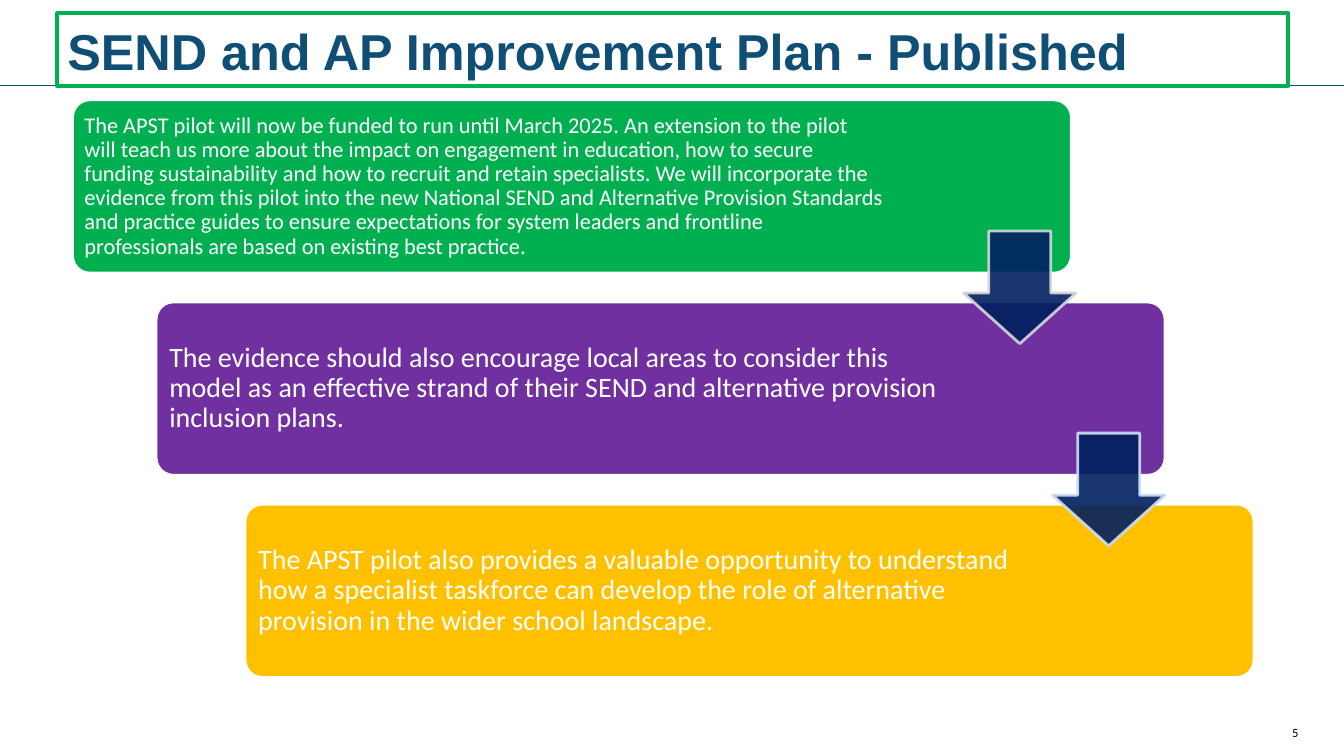
from dataclasses import dataclass
from lxml.etree import SubElement
from pptx import Presentation
from pptx.dml.color import RGBColor
from pptx.enum.shapes import MSO_CONNECTOR, MSO_SHAPE
from pptx.enum.text import MSO_ANCHOR, PP_ALIGN
from pptx.oxml.ns import qn
from pptx.util import Pt


@dataclass(frozen=True)
class Theme:
    teal: str = "104F75"
    green: str = "00B050"
    purple: str = "7030A0"
    gold: str = "FFC000"
    navy: str = "002060"
    grey: str = "D8D8D8"
    sky: str = "CEE0F4"
    white: str = "FFFFFF"
    black: str = "000000"
    head: str = "Arial"
    body: str = "Calibri"
    title: int = 36
    large: int = 20
    small: int = 16
    note: int = 9


THEME = Theme()
WIDE, HIGH = 960, 540
STEP = 144.4
CARD = 123.8

# Left, width, fill, type size, text width, inset, words
CARDS = [
    (51.8, 713.5, THEME.green, THEME.small, 581, 5,
     "The APST pilot will now be funded to run until March 2025. An extension "
     "to the pilot will teach us more about the impact on engagement in "
     "education, how to secure funding sustainability and how to recruit and "
     "retain specialists. We will incorporate the evidence from this pilot "
     "into the new National SEND and Alternative Provision Standards and "
     "practice guides to ensure expectations for system leaders and frontline "
     "professionals are based on existing best practice."),
    (111.5, 720.7, THEME.purple, THEME.large, 569.5, 5.8,
     "The evidence should also encourage local areas to consider this model "
     "as an effective strand of their SEND and alternative provision "
     "inclusion plans."),
    (175, 720.7, THEME.gold, THEME.large, 569.5, 5.8,
     "The APST pilot also provides a valuable opportunity to understand how a "
     "specialist taskforce can develop the role of alternative provision in "
     "the wider school landscape."),
]


def place(box):
    return [Pt(n) for n in box]


def rgb(code):
    return RGBColor.from_string(code)


def fade(color, share):
    """Make a solid fill or line partly see-through."""
    for tone in color.iter(qn("a:srgbClr")):
        SubElement(tone, qn("a:alpha"), val=str(share * 1000))


def draw(slide, kind, box, fill, edge, width):
    shape = slide.shapes.add_shape(kind, *place(box))
    shape.shadow.inherit = False
    if fill:
        shape.fill.solid()
        shape.fill.fore_color.rgb = rgb(fill)
    else:
        shape.fill.background()
    shape.line.color.rgb = rgb(edge)
    shape.line.width = Pt(width)
    return shape


def write(shape, words, face, size, color, inset, anchor=MSO_ANCHOR.MIDDLE,
          align=PP_ALIGN.LEFT, bold=False, lead=1.0):
    frame = shape.text_frame
    frame.text = words
    frame.word_wrap = True
    frame.vertical_anchor = anchor
    frame.margin_left = frame.margin_right = Pt(inset[0])
    frame.margin_top = frame.margin_bottom = Pt(inset[1])
    para = frame.paragraphs[0]
    para.alignment = align
    para.line_spacing = lead
    font = para.runs[0].font
    font.name, font.size, font.bold = face, Pt(size), bold
    font.color.rgb = rgb(color)


def add_rule(slide, left, top, width):
    rule = slide.shapes.add_connector(
        MSO_CONNECTOR.STRAIGHT, *place((left, top, left + width, top)))
    rule.line.color.rgb = rgb(THEME.teal)
    rule.line.width = Pt(1)
    SubElement(rule._element.spPr, qn("a:effectLst"))


def add_title(slide, box):
    shape = draw(slide, MSO_SHAPE.RECTANGLE, box, None, THEME.green, 3)
    write(shape, "SEND and AP Improvement Plan - Published", THEME.head,
          THEME.title, THEME.teal, (7.2, 3.6), MSO_ANCHOR.BOTTOM, bold=True)


def add_card(slide, box, fill, size, span, inset, words):
    left, top, width, height = box
    card = draw(slide, MSO_SHAPE.ROUNDED_RECTANGLE, box, fill, THEME.white, 2)
    card.adjustments[0] = 0.1
    pad = 3.6
    text = slide.shapes.add_textbox(
        *place((left + pad, top + pad, span, height - 2 * pad)))
    write(text, words, THEME.body, size, THEME.white, (inset, inset), lead=0.9)


def add_arrow(slide, box, edge):
    arrow = draw(slide, MSO_SHAPE.DOWN_ARROW, box, THEME.navy, edge, 2)
    arrow.adjustments[0] = 0.55
    arrow.adjustments[1] = 0.45
    fade(arrow._element.spPr, 90)


def add_steps(slide, top):
    """Draw the staggered cards, then an arrow into each later card."""
    for row, (left, width, *rest) in enumerate(CARDS):
        add_card(slide, (left, top + row * STEP, width, CARD), *rest)
    for row, edge in enumerate((THEME.grey, THEME.sky), 1):
        left = CARDS[row][0] + 576.7
        add_arrow(slide, (left, top + row * STEP - 50.7, 80.5, 80.5), edge)


def add_number(slide, box):
    text = slide.shapes.add_textbox(*place(box))
    write(text, "5", THEME.body, THEME.note, THEME.black, (0, 0),
          align=PP_ALIGN.CENTER)


def main():
    deck = Presentation()
    deck.slide_width, deck.slide_height = Pt(WIDE), Pt(HIGH)
    slide = deck.slides.add_slide(deck.slide_layouts[6])
    add_rule(slide, 0, 61.2, WIDE)
    add_number(slide, (906.5, 517, 37.4, 12.2))
    add_steps(slide, 71.3)
    add_title(slide, (41, 9.4, 879, 51.8))
    deck.save("out.pptx")


if __name__ == "__main__":
    main()
